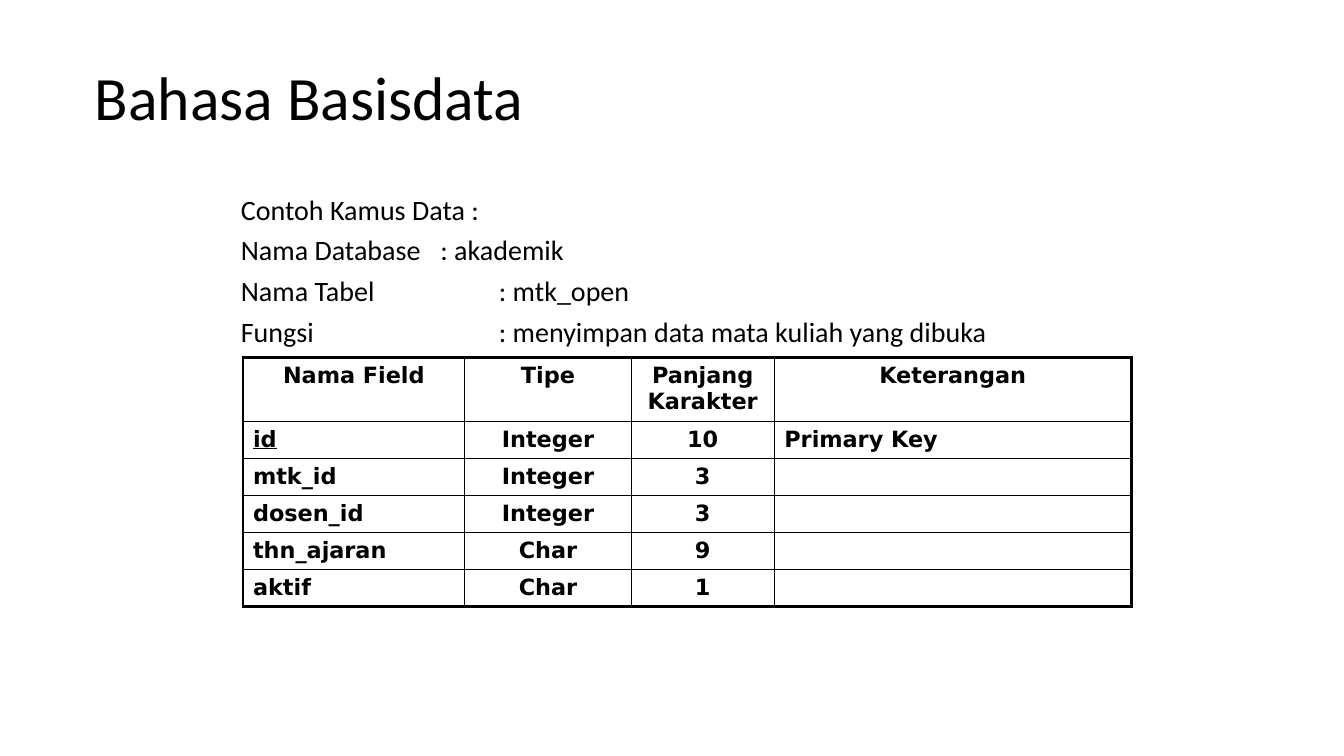
from lxml.etree import SubElement
from pptx import Presentation
from pptx.dml.color import RGBColor
from pptx.enum.text import MSO_ANCHOR as Anchor, PP_ALIGN as Align
from pptx.oxml.ns import qn
from pptx.util import Inches, Pt


def color(value):
    return RGBColor.from_string(value)


def write(paragraph, text, size=20, font="Calibri", fill="000000", bold=False,
          underline=False, align=Align.LEFT, spacing=1.0, before=0):
    paragraph.alignment = align
    paragraph.line_spacing = spacing
    paragraph.space_before = Pt(before)
    if not text:
        end = SubElement(paragraph._p, qn("a:endParaRPr"), sz=str(size * 100))
        SubElement(end, qn("a:latin"), typeface=font)
        return
    run = paragraph.add_run()
    run.text = text
    run.font.size, run.font.name = Pt(size), font
    run.font.bold, run.font.underline = bold, underline
    run.font.color.rgb = color(fill)


class DictionarySlide:
    """Holds the style and the current slide, and adds its elements."""

    ink = "000000"
    table_font = "DejaVu Sans"
    outer_line, inner_line = 2.25, 1

    def __init__(self, presentation):
        self.slide = presentation.slides.add_slide(presentation.slide_layouts[5])

    def title(self, text, box):
        shape = self.slide.shapes.title
        shape.left, shape.top, shape.width, shape.height = map(Inches, box)
        shape.text_frame.word_wrap = True
        shape.text_frame.vertical_anchor = Anchor.MIDDLE
        write(shape.text_frame.paragraphs[0], text, size=44, fill=self.ink, spacing=0.9)

    def facts(self, lines, box):
        frame = self.slide.shapes.add_textbox(*map(Inches, box)).text_frame
        frame.word_wrap = True
        for index, (text, stop) in enumerate(lines):
            paragraph = frame.add_paragraph() if index else frame.paragraphs[0]
            write(paragraph, text, fill=self.ink, spacing=0.8, before=10 if index else 0)
            if stop:
                tabs = SubElement(paragraph._p.get_or_add_pPr(), qn("a:tabLst"))
                SubElement(tabs, qn("a:tab"), pos=str(Inches(stop)), algn="l")

    def borders(self, cell, outer_sides):
        properties = cell._tc.get_or_add_tcPr()
        for side in "LRTB":
            width = self.outer_line if side in outer_sides else self.inner_line
            line = SubElement(properties, qn(f"a:ln{side}"), w=str(Pt(width)))
            fill = SubElement(line, qn("a:solidFill"))
            SubElement(fill, qn("a:srgbClr"), val=self.ink)
        cell.fill.background()

    def table(self, rows, widths, heights, left, top):
        table = self.slide.shapes.add_table(
            len(rows), len(widths), Inches(left), Inches(top),
            Inches(sum(widths)), Inches(sum(heights))).table
        table.first_row = table.horz_banding = False
        for column, width in zip(table.columns, widths):
            column.width = Inches(width)
        for row, height in zip(table.rows, heights):
            row.height = Inches(height)
        last_row, last_column = len(rows) - 1, len(widths) - 1
        for r, row in enumerate(rows):
            for c, text in enumerate(row):
                cell = table.cell(r, c)
                centered = r == 0 or 0 < c < last_column
                write(cell.text_frame.paragraphs[0], text, size=16,
                      font=self.table_font, fill=self.ink, bold=True,
                      underline=text == "id",
                      align=Align.CENTER if centered else Align.LEFT)
                edges = {"L": c == 0, "R": c == last_column,
                         "T": r == 0, "B": r == last_row}
                self.borders(cell, [side for side, outer in edges.items() if outer])


def main():
    presentation = Presentation()
    presentation.slide_width, presentation.slide_height = Inches(13.33), Inches(7.5)
    page = DictionarySlide(presentation)
    page.title("Bahasa Basisdata", (0.84, 0.33, 11.67, 1.33))
    page.facts([
        ("Contoh Kamus Data :", None),
        ("Nama Database\t: akademik", 1.98),
        ("Nama Tabel\t: mtk_open", 2.56),
        ("Fungsi\t: menyimpan data mata kuliah yang dibuka", 2.56),
    ], (2.29, 1.92, 9.18, 1.68))
    fields = [
        ("Nama Field", "Tipe", "Panjang Karakter", "Keterangan"),
        ("id", "Integer", "10", "Primary Key"),
        ("mtk_id", "Integer", "3", ""),
        ("dosen_id", "Integer", "3", ""),
        ("thn_ajaran", "Char", "9", ""),
        ("aktif", "Char", "1", ""),
    ]
    page.table(fields, [2.2, 1.65, 1.42, 3.54], [0.61] + [0.36] * 5, 2.41, 3.55)
    presentation.save("out.pptx")


if __name__ == "__main__":
    main()
